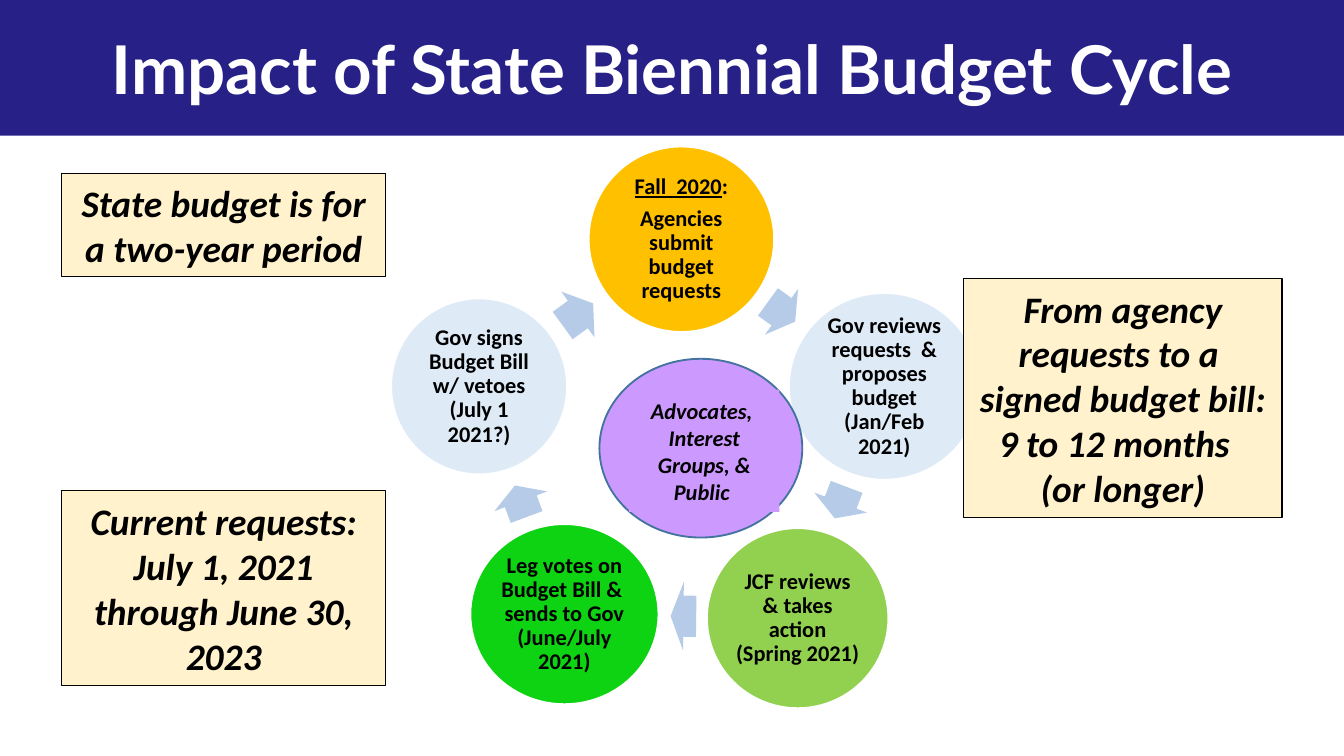
import pptx
import pptx.dml.color
import pptx.enum.shapes
import pptx.enum.text
import pptx.util
from typing import NamedTuple, Optional

PX = 9144  # EMU in one px, 100 px to the inch
SHAPE = pptx.enum.shapes.MSO_SHAPE
ALIGN = pptx.enum.text.PP_ALIGN
ANCHOR = pptx.enum.text.MSO_ANCHOR
BLACK, WHITE = "000000", "FFFFFF"
NAVY, PURPLE, PALE_BLUE = "262087", "CC99FF", "DEEBF7"


class Box(NamedTuple):
    left: int
    top: int
    width: int
    height: int


class Span(NamedTuple):
    text: str
    underline: bool = False


class Style(NamedTuple):
    font: dict
    para: dict
    margin_x: int = 10
    margin_y: int = 5
    color: str = BLACK


class Stage(NamedTuple):
    box: Box
    fill: str
    paras: list


class Arrow(NamedTuple):
    box: Box
    rotation: float


class Note(NamedTuple):
    box: Box
    text: str


def font_format(size: int, name: str = "Calibri", italic: bool = False) -> dict:
    return {"name": name, "size": pptx.util.Pt(size), "bold": True, "italic": italic}


CENTERED = {"alignment": ALIGN.CENTER}
TITLE_STYLE = Style(font_format(36, "Lato"), CENTERED, color=WHITE)
STAGE_STYLE = Style(
    font_format(12),
    {**CENTERED, "line_spacing": 0.9, "space_after": pptx.util.Pt(4.2)},
    margin_x=1, margin_y=2)
HUB_STYLE = Style(font_format(12, italic=True), CENTERED)
NOTE_STYLE = Style(font_format(20, italic=True), CENTERED)

STAGES = [
    Stage(Box(438, 109, 138, 138), "FFC000",
          [[Span("Fall  2020", True), Span(":")],
           [Span("Agencies submit budget requests")]]),
    Stage(Box(587, 218, 142, 139), PALE_BLUE,
          [[Span("Gov reviews requests  & proposes budget (Jan/Feb 2021)")]]),
    Stage(Box(526, 393, 135, 134), "92D050",
          [[Span("JCF reviews & takes action (Spring 2021)")]]),
    Stage(Box(350, 390, 140, 134), "0DD312",
          [[Span("Leg votes on Budget Bill &  sends to Gov (June/July 2021)")]]),
    Stage(Box(291, 222, 131, 131), PALE_BLUE,
          [[Span("Gov signs Budget Bill w/ vetoes (July 1 2021?)")]]),
]
ARROWS = [
    Arrow(Box(569, 211, 25, 42), 36),
    Arrow(Box(613, 353, 25, 42), 110.8),
    Arrow(Box(499, 433, 19, 51), 180.7),
    Arrow(Box(375, 352, 25, 42), 249.5),
    Arrow(Box(416, 213, 28, 42), 324),
]
NOTES = [
    Note(Box(46, 129, 241, 77), "State budget is for a two-year period"),
    Note(Box(717, 207, 237, 178),
         "From agency requests to a  signed budget bill: 9 to 12 months   (or longer)"),
    Note(Box(46, 365, 241, 145),
         "Current requests: July 1, 2021 through June 30, 2023"),
]


def rgb(color: str) -> pptx.dml.color.RGBColor:
    return pptx.dml.color.RGBColor.from_string(color)


def apply(target, values: dict) -> None:
    for name, value in values.items():
        setattr(target, name, value)


def place(shape, box: Box) -> None:
    apply(shape, {name: length * PX for name, length in box._asdict().items()})


def paint(shape, color: str) -> None:
    shape.fill.solid()
    shape.fill.fore_color.rgb = rgb(color)


def draw(page, kind, box: Box, fill: str, line: Optional[str] = None,
         line_width: float = 1):
    shape = page.shapes.add_shape(kind, *(length * PX for length in box))
    shape.shadow.inherit = False
    paint(shape, fill)
    if line:
        shape.line.color.rgb = rgb(line)
        shape.line.width = pptx.util.Pt(line_width)
    else:
        shape.line.fill.background()
    return shape


def write(shape, paras: list, style: Style) -> None:
    frame = shape.text_frame
    apply(frame, {
        "word_wrap": True,
        "auto_size": pptx.enum.text.MSO_AUTO_SIZE.NONE,
        "vertical_anchor": ANCHOR.MIDDLE,
        "margin_left": style.margin_x * PX, "margin_right": style.margin_x * PX,
        "margin_top": style.margin_y * PX, "margin_bottom": style.margin_y * PX})
    for index, spans in enumerate(paras):
        para = frame.add_paragraph() if index else frame.paragraphs[0]
        apply(para, style.para)
        for span in spans:
            run = para.add_run()
            run.text = span.text
            apply(run.font, style.font)
            run.font.color.rgb = rgb(style.color)
            if span.underline:
                run.font.underline = True


def main() -> None:
    deck = pptx.Presentation()
    deck.slide_width = 1000 * PX
    deck.slide_height = deck.slide_width * 9 // 16
    page = deck.slides.add_slide(deck.slide_layouts[5])

    # Title band
    title = page.shapes.title
    place(title, Box(0, 0, 1000, 101))
    paint(title, NAVY)
    write(title, [[Span("Impact of State Biennial Budget Cycle")]], TITLE_STYLE)

    # Budget cycle: each stage is followed by its arrow
    for stage, arrow in zip(STAGES, ARROWS):
        circle = draw(page, SHAPE.OVAL, stage.box, stage.fill, WHITE)
        write(circle, stage.paras, STAGE_STYLE)
        pointer = draw(page, SHAPE.RIGHT_ARROW, arrow.box, "B5CBE7")
        pointer.adjustments[0], pointer.adjustments[1] = 0.6, 0.5
        pointer.rotation = arrow.rotation

    # Hub of the cycle
    draw(page, SHAPE.OVAL, Box(446, 267, 151, 133), PURPLE, "43739E")
    hub = draw(page, SHAPE.RECTANGLE, Box(468, 290, 112, 91), PURPLE)
    write(hub, [[Span("Advocates,  Interest Groups, & Public ")]], HUB_STYLE)

    # Side notes
    for note in NOTES:
        panel = draw(page, SHAPE.RECTANGLE, note.box, "FFF2CC", BLACK, 0.75)
        write(panel, [[Span(note.text)]], NOTE_STYLE)

    deck.save("out.pptx")


if __name__ == "__main__":
    main()
